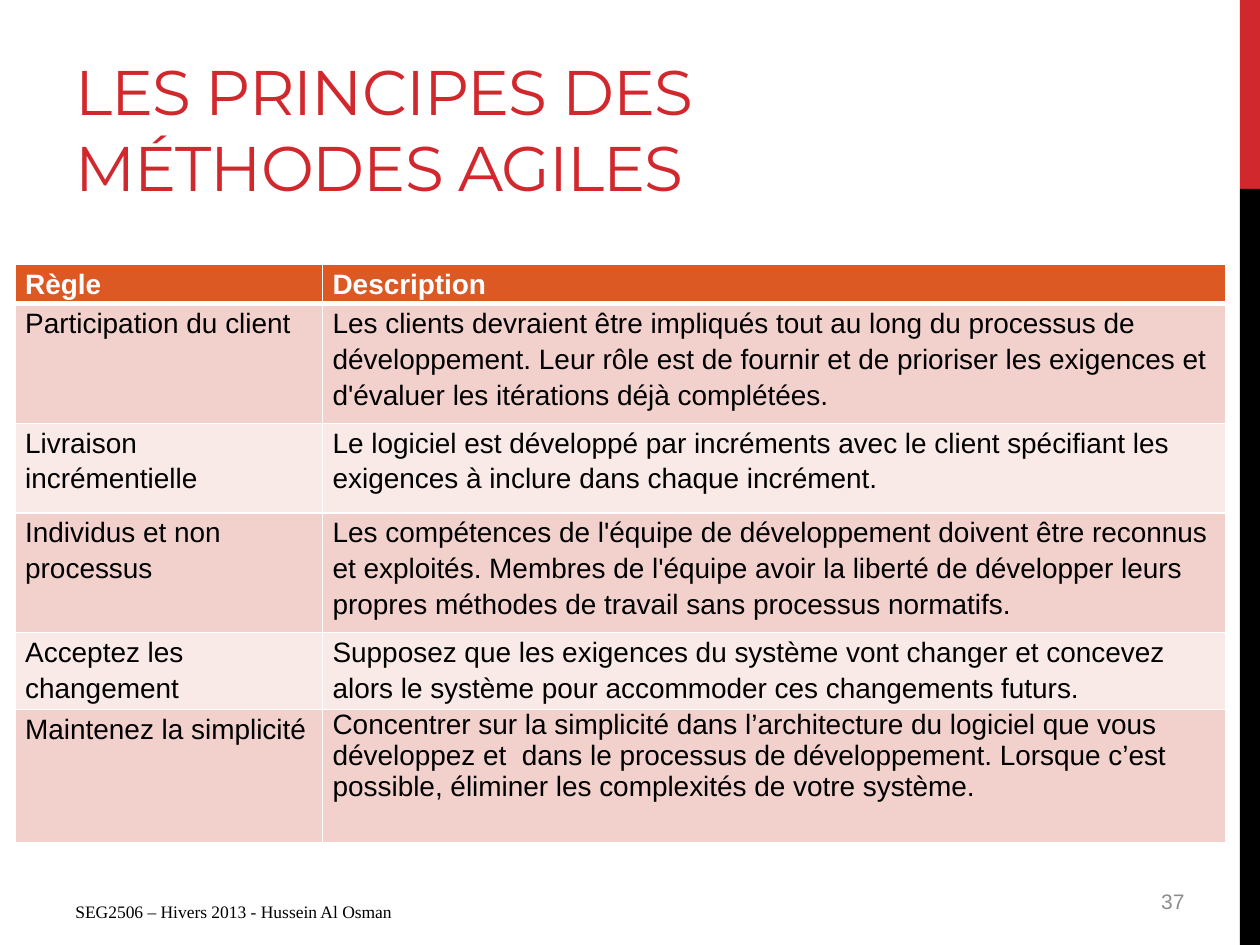
from dataclasses import dataclass

from lxml import etree
from pptx import Presentation
from pptx import util as u
from pptx.dml.color import RGBColor
from pptx.enum import shapes, text
from pptx.oxml.ns import qn

RED = RGBColor(0xD1, 0x28, 0x2E)
BLACK = RGBColor(0x00, 0x00, 0x00)
WHITE = RGBColor(0xFF, 0xFF, 0xFF)
GREY = RGBColor(0x8C, 0x8C, 0x8C)
ORANGE = RGBColor(0xDC, 0x59, 0x24)
BAND_DARK = RGBColor(0xF2, 0xD1, 0xCD)
BAND_LIGHT = RGBColor(0xF9, 0xEA, 0xE8)

WIDTH, HEIGHT = u.Inches(10), u.Inches(7.5)
BAR_LEFT = 0.984  # share of the slide's width
BAR_SPLIT = 0.2  # share of the slide's height
COLUMNS = (2.44, 7.17)


@dataclass(frozen=True)
class Rule:
    name: str
    description: str
    height: float
    description_spacing: float = 1.15


HEADER = Rule("Règle", "Description", 0.31)
RULES = (
    Rule("Participation du client",
         "Les clients devraient être impliqués tout au long du processus de "
         "développement. Leur rôle est de fournir et de prioriser les exigences "
         "et d'évaluer les itérations déjà complétées.", 0.95),
    Rule("Livraison incrémentielle",
         "Le logiciel est développé par incréments avec le client spécifiant les "
         "exigences à inclure dans chaque incrément.", 0.71),
    Rule("Individus et non processus",
         "Les compétences de l'équipe de développement doivent être reconnus et "
         "exploités. Membres de l'équipe avoir la liberté de développer leurs "
         "propres méthodes de travail sans processus normatifs.", 0.95),
    Rule("Acceptez les changement",
         "Supposez que les exigences du système vont changer et concevez alors le "
         "système pour accommoder ces changements futurs.", 0.61),
    Rule("Maintenez la simplicité",
         "Concentrer sur la simplicité dans l’architecture du logiciel que vous "
         "développez et  dans le processus de développement. Lorsque c’est "
         "possible, éliminer les complexités de votre système.", 1.06, 1.0),
)


def write(frame, words: str, *, size: float, font: str, color: RGBColor,
          bold: bool = False, align=text.PP_ALIGN.LEFT, spacing: float = 1.0,
          anchor=text.MSO_ANCHOR.TOP, tracking: float = 0) -> None:
    frame.word_wrap = True
    frame.auto_size = text.MSO_AUTO_SIZE.NONE
    frame.vertical_anchor = anchor
    para = frame.paragraphs[0]
    para.alignment = align
    para.line_spacing = spacing
    span = para.add_run()
    span.text = words
    span.font.size = u.Pt(size)
    span.font.name = font
    span.font.bold = bold
    span.font.color.rgb = color
    if tracking:
        span._r.get_or_add_rPr().set("spc", str(round(tracking * 100)))


def add_bar(page, top: float, bottom: float, color: RGBColor) -> None:
    """Draw a piece of the right-hand bar between two shares of the height."""
    bar = page.shapes.add_shape(
        shapes.MSO_SHAPE.RECTANGLE, int(BAR_LEFT * WIDTH), int(top * HEIGHT),
        int((1 - BAR_LEFT) * WIDTH), int((bottom - top) * HEIGHT))
    bar.shadow.inherit = False
    bar.fill.solid()
    bar.fill.fore_color.rgb = color
    bar.line.fill.background()


def set_borders(cell, bottom: float) -> None:
    properties = cell._tc.get_or_add_tcPr()
    widths = {"lnL": 1, "lnR": 1, "lnT": 1, "lnB": bottom}
    for place, (side, width) in enumerate(widths.items()):
        line = etree.Element(qn(f"a:{side}"), w=str(u.Pt(width)))
        fill = etree.SubElement(line, qn("a:solidFill"))
        etree.SubElement(fill, qn("a:srgbClr"), val=str(WHITE))
        properties.insert(place, line)


def fill_cell(cell, words: str, fill: RGBColor, spacing: float, header: bool) -> None:
    cell.margin_left = cell.margin_right = u.Inches(0.08)
    cell.margin_top = cell.margin_bottom = 0
    cell.fill.solid()
    cell.fill.fore_color.rgb = fill
    write(cell.text_frame, words, size=16, font="Arial", bold=header,
          color=WHITE if header else BLACK, spacing=spacing)
    set_borders(cell, bottom=3 if header else 1)


def add_rules(page) -> None:
    rules = (HEADER, *RULES)
    table = page.shapes.add_table(
        len(rules), len(COLUMNS), u.Inches(0.12), u.Inches(2.1),
        u.Inches(sum(COLUMNS)), u.Inches(sum(rule.height for rule in rules))).table
    for column, width in zip(table.columns, COLUMNS):
        column.width = u.Inches(width)
    for index, rule in enumerate(rules):
        header = index == 0
        fill = ORANGE if header else BAND_DARK if index % 2 else BAND_LIGHT
        table.rows[index].height = u.Inches(rule.height)
        fill_cell(table.cell(index, 0), rule.name, fill, 1.15, header)
        fill_cell(table.cell(index, 1), rule.description, fill,
                  rule.description_spacing, header)


def add_label(page, left: float, top: float, width: float, height: float,
              words: str, **style) -> None:
    box = page.shapes.add_textbox(*map(u.Inches, (left, top, width, height)))
    write(box.text_frame, words, **style)


def main() -> None:
    deck = Presentation()
    deck.slide_width, deck.slide_height = WIDTH, HEIGHT
    page = deck.slides.add_slide(deck.slide_layouts.get_by_name("Title Only"))

    add_bar(page, 0, BAR_SPLIT, RED)
    add_bar(page, BAR_SPLIT, 1, BLACK)

    title = page.shapes.title
    title.left, title.top = u.Inches(0.5), u.Inches(0.17)
    title.width, title.height = u.Inches(7.58), u.Inches(1.5)
    write(title.text_frame, "LES PRINCIPES DES MÉTHODES AGILES", size=36,
          font="Montserrat", color=RED, anchor=text.MSO_ANCHOR.BOTTOM, tracking=-0.6)

    add_rules(page)
    add_label(page, 0.5, 7.1, 3.75, 0.31, "SEG2506 – Hivers 2013 - Hussein Al Osman",
              size=10, font="Times New Roman", color=BLACK)
    add_label(page, 7.17, 6.95, 2.33, 0.4, "37", size=12, font="Arial", color=GREY,
              align=text.PP_ALIGN.RIGHT, anchor=text.MSO_ANCHOR.MIDDLE)
    deck.save("out.pptx")


if __name__ == "__main__":
    main()
